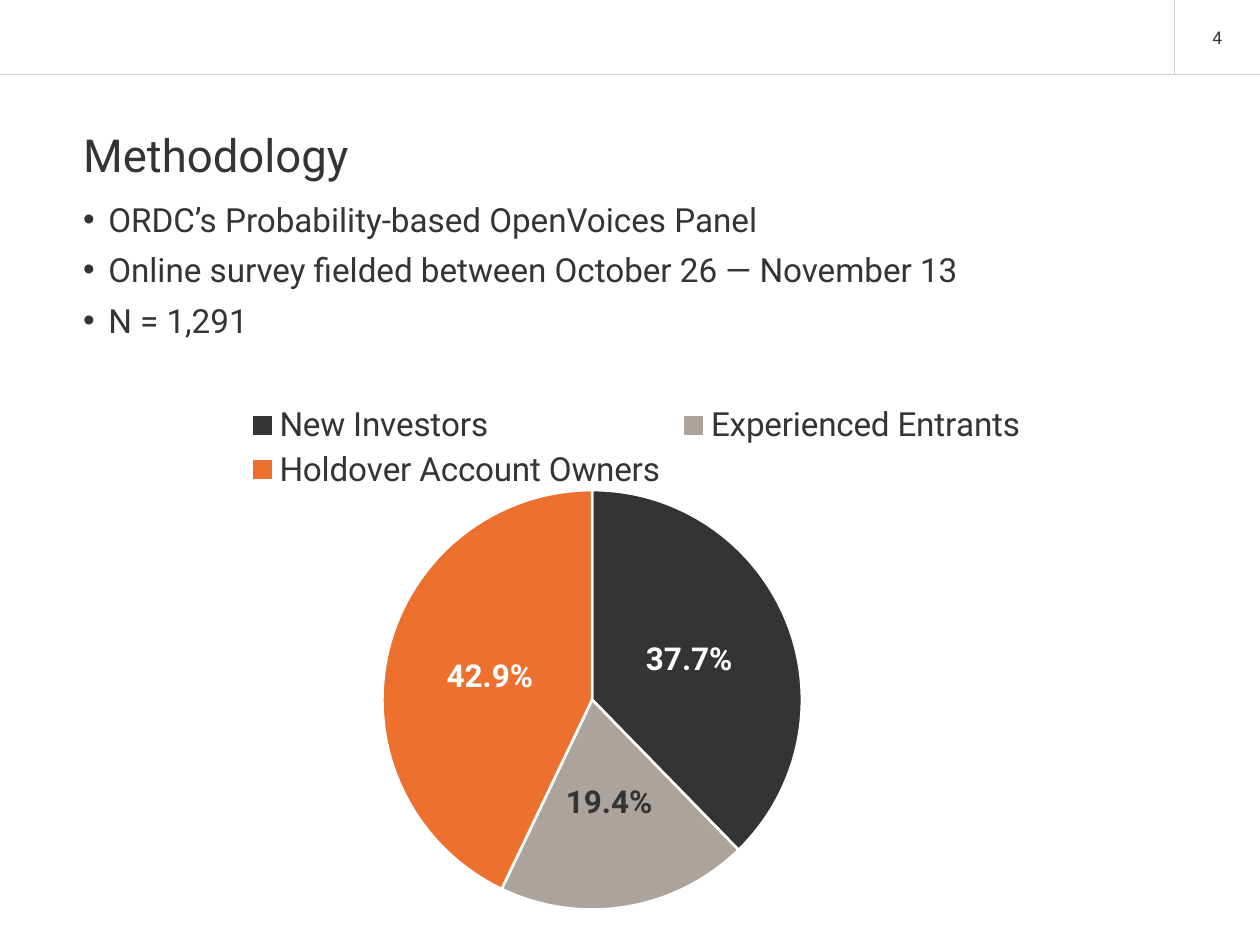
from lxml import etree
from pptx import Presentation
from pptx.chart.data import CategoryChartData
from pptx.dml.color import RGBColor
from pptx.enum.chart import XL_CHART_TYPE as ChartType
from pptx.enum.chart import XL_LABEL_POSITION as LabelPosition
from pptx.enum.chart import XL_LEGEND_POSITION as LegendPosition
from pptx.enum.shapes import MSO_CONNECTOR as Connector
from pptx.enum.text import MSO_ANCHOR as Anchor
from pptx.enum.text import PP_ALIGN as Align
from pptx.oxml import parse_xml
from pptx.oxml.ns import nsdecls, qn
from pptx.util import Inches, Pt

DARK, GRAY, ORANGE, RULE, WHITE = "343434", "ADA39D", "EC712E", "D5D0CA", "FFFFFF"


def color(hex_code):
    return RGBColor.from_string(hex_code)


def style(font, size, hex_code=DARK, bold=False):
    font.name, font.size, font.bold = "Roboto", Pt(size), bold
    font.color.rgb = color(hex_code)


deck = Presentation()
deck.slide_width, deck.slide_height = Inches(10), Inches(7.5)
page = deck.slides.add_slide(deck.slide_layouts[6])

# Header rules
for x1, y1, x2, y2 in [(9.32, 0, 9.32, 0.59), (0, 0.59, 10, 0.59)]:
    rule = page.shapes.add_connector(
        Connector.STRAIGHT, Inches(x1), Inches(y1), Inches(x2), Inches(y2))
    rule.line.color.rgb = color(RULE)
    rule.line.width = Pt(0.65)
    etree.SubElement(rule._element.spPr, qn("a:effectLst"))

# Title, page number and bullets
bullets = [
    "ORDC’s Probability-based OpenVoices Panel",
    "Online survey fielded between October 26 — November 13",
    "N = 1,291",
]
text_boxes = [
    ((0.66, 0.96, 7.8, 0.57), ["Methodology"], 26, 4),
    ((9.32, 0.01, 0.68, 0.58), ["4"], 10, 0),
    ((0.66, 1.53, 7.8, 1.25), bullets, 19, 6),
]
for place, lines, size, space_after in text_boxes:
    box = page.shapes.add_textbox(*map(Inches, place))
    frame = box.text_frame
    frame.word_wrap = True
    if lines == ["4"]:
        frame.vertical_anchor = Anchor.MIDDLE
    else:
        frame.margin_left = 0
    for index, line in enumerate(lines):
        para = frame.paragraphs[0] if index == 0 else frame.add_paragraph()
        para.text = line
        para.space_after = Pt(space_after)
        if lines == ["4"]:
            para.alignment = Align.CENTER
        if lines is bullets:
            properties = para._p.get_or_add_pPr()
            properties.set("marL", str(Inches(0.2)))
            properties.set("indent", str(-Inches(0.2)))
            etree.SubElement(properties, qn("a:buFont")).set("typeface", "Arial")
            etree.SubElement(properties, qn("a:buChar")).set("char", "•")
        style(para.font, size)

# Pie chart of investor groups
groups = [
    ("New Investors", 0.377, DARK, WHITE),
    ("Experienced Entrants", 0.194, GRAY, DARK),
    ("Holdover Account Owners", 0.429, ORANGE, WHITE),
]
data = CategoryChartData(number_format="0.0%")
data.categories = [group[0] for group in groups]
data.add_series("Series 1", [group[1] for group in groups])
chart = page.shapes.add_chart(
    ChartType.PIE, Inches(0), Inches(3.08), Inches(10), Inches(4.5), data).chart
chart.has_title = False
style(chart.font, 10)
chart.has_legend = True
chart.legend.position = LegendPosition.TOP
chart.legend.include_in_layout = False
style(chart.legend.font, 19)

plot = chart.plots[0]
plot.vary_by_categories = True
plot.has_data_labels = True
labels = plot.data_labels
labels.show_value, labels.show_percentage = True, False
labels.number_format, labels.number_format_is_linked = "0.0%", False
labels.position = LabelPosition.CENTER
style(labels.font, 18, WHITE, bold=True)
for index, (name, share, fill, label_color) in enumerate(groups):
    point = plot.series[0].points[index]
    point.format.fill.solid()
    point.format.fill.fore_color.rgb = color(fill)
    point.format.line.color.rgb = color(WHITE)
    point.format.line.width = Pt(1.5)
    style(point.data_label.font, 18, label_color, bold=True)
    point.data_label.position = LabelPosition.CENTER

# Fixed places of the pie and its legend, as fractions of the chart
plot_area = chart._chartSpace.chart.plotArea
legend = chart.legend._element
for parent, position, target, place in [
    (plot_area, 0, "inner", (0.28, 0.18, 0.38, 0.74)),
    (legend, 1, None, (0.19, 0.02, 0.63, 0.17)),
]:
    for old_layout in parent.findall(qn("c:layout")):
        parent.remove(old_layout)
    layout = parse_xml(f"<c:layout {nsdecls('c')}><c:manualLayout/></c:layout>")
    settings = [("layoutTarget", target)] if target else []
    settings += [("xMode", "edge"), ("yMode", "edge"), *zip("xywh", place)]
    for tag, value in settings:
        etree.SubElement(layout[0], qn(f"c:{tag}")).set("val", str(value))
    parent.insert(position, layout)

deck.save("out.pptx")
